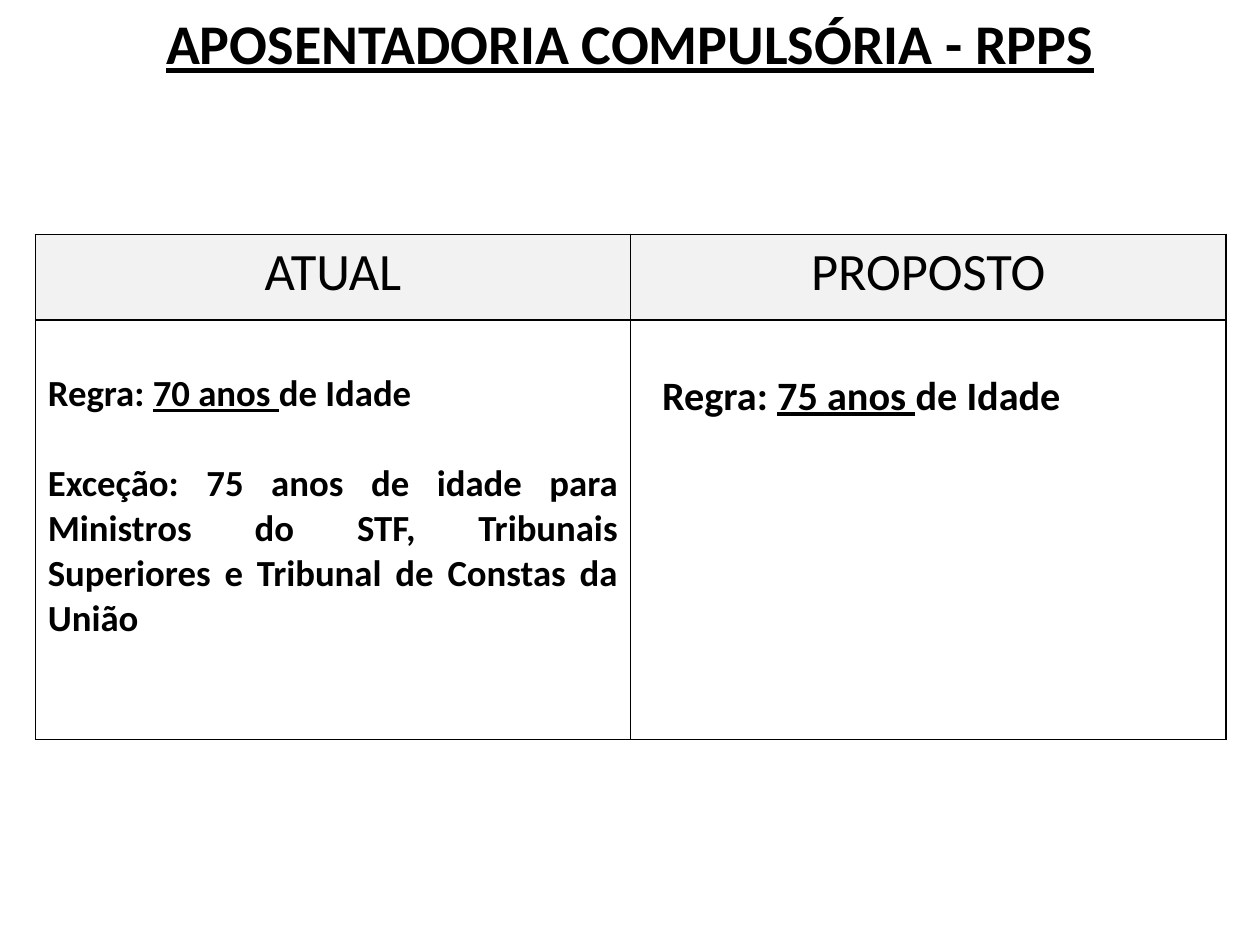
from dataclasses import dataclass

from lxml import etree
from pptx import Presentation
from pptx.dml.color import RGBColor
from pptx.enum import text
from pptx.oxml.ns import qn
from pptx.util import Inches, Pt

WIDTH, HEIGHT = 10, 7.5
FONT, INK, HEADER_FILL, BODY_FILL = "Calibri", "000000", "F2F2F2", "FFFFFF"
LEFT, CENTER, JUSTIFY = text.PP_ALIGN.LEFT, text.PP_ALIGN.CENTER, text.PP_ALIGN.JUSTIFY
TABLE_LEFT, TABLE_TOP, TABLE_WIDTH = 0.28, 1.86, 9.45
ROW_HEIGHTS = (0.68, 3.33)
BODY_MARGIN_TOP = 0.41


@dataclass(frozen=True)
class Passage:
    words: str
    underline: bool = False


@dataclass(frozen=True)
class Line:
    passages: tuple[Passage, ...]
    size: float
    align: text.PP_ALIGN
    bold: bool = True
    space_before: float = 0


@dataclass(frozen=True)
class Entry:
    lines: tuple[Line, ...]
    fill: str
    margin_left: float = 0.1
    margin_top: float = 0.05


def color(code: str) -> RGBColor:
    return RGBColor.from_string(code)


def write_lines(frame, lines: tuple[Line, ...]) -> None:
    for index, line in enumerate(lines):
        paragraph = frame.add_paragraph() if index else frame.paragraphs[0]
        paragraph.alignment = line.align
        if index:
            paragraph.space_before = Pt(line.space_before)
        for passage in line.passages:
            run = paragraph.add_run()
            run.text = passage.words
            run.font.name = FONT
            run.font.size = Pt(line.size)
            run.font.bold = line.bold
            run.font.underline = passage.underline
            run.font.color.rgb = color(INK)


def draw_borders(cell) -> None:
    properties = cell._tc.get_or_add_tcPr()
    for index, side in enumerate(("a:lnL", "a:lnR", "a:lnT", "a:lnB")):
        border = etree.Element(qn(side), w=str(Pt(1)))
        fill = etree.SubElement(border, qn("a:solidFill"))
        etree.SubElement(fill, qn("a:srgbClr"), val=INK)
        properties.insert(index, border)


def draw_entry(cell, entry: Entry) -> None:
    cell.margin_left = Inches(entry.margin_left)
    cell.margin_top = Inches(entry.margin_top)
    cell.fill.solid()
    cell.fill.fore_color.rgb = color(entry.fill)
    write_lines(cell.text_frame, entry.lines)
    draw_borders(cell)


def draw_title(slide, title: Line) -> None:
    frame = slide.shapes.add_textbox(0, 0, Inches(WIDTH), Inches(HEIGHT * 0.1)).text_frame
    frame.word_wrap = True
    frame.margin_top = Inches(0.07)
    write_lines(frame, (title,))


def draw_comparison(slide, rows: tuple[tuple[Entry, ...], ...]) -> None:
    table = slide.shapes.add_table(
        len(rows), len(rows[0]), Inches(TABLE_LEFT), Inches(TABLE_TOP),
        Inches(TABLE_WIDTH), Inches(sum(ROW_HEIGHTS)),
    ).table
    table.horz_banding = False
    table.first_row = False
    for row, height, entries in zip(table.rows, ROW_HEIGHTS, rows):
        row.height = Inches(height)
        for cell, entry in zip(row.cells, entries):
            draw_entry(cell, entry)


def header(label: str) -> Entry:
    return Entry((Line((Passage(label),), 30, CENTER, bold=False),), HEADER_FILL)


def rule(age: str, size: float, align: text.PP_ALIGN) -> Line:
    passages = (Passage("Regra: "), Passage(age, underline=True), Passage("de Idade"))
    return Line(passages, size, align)


TITLE = Line((Passage("APOSENTADORIA COMPULSÓRIA - RPPS", underline=True),), 32, CENTER)
EXCEPTION = Line(
    (Passage("Exceção: 75 anos de idade para Ministros do STF, "
             "Tribunais Superiores e Tribunal de Constas da União"),),
    21, JUSTIFY, space_before=25.6,
)
CURRENT = Entry((rule("70 anos ", 21, JUSTIFY), EXCEPTION), BODY_FILL,
                margin_top=BODY_MARGIN_TOP)
PROPOSED = Entry((rule("75 anos ", 23, LEFT),), BODY_FILL,
                 margin_left=0.25, margin_top=BODY_MARGIN_TOP)
ROWS = ((header("ATUAL"), header("PROPOSTO")), (CURRENT, PROPOSED))


def main() -> None:
    deck = Presentation()
    deck.slide_width, deck.slide_height = Inches(WIDTH), Inches(HEIGHT)
    slide = deck.slides.add_slide(deck.slide_layouts[6])
    draw_title(slide, TITLE)
    draw_comparison(slide, ROWS)
    deck.save("out.pptx")


if __name__ == "__main__":
    main()
